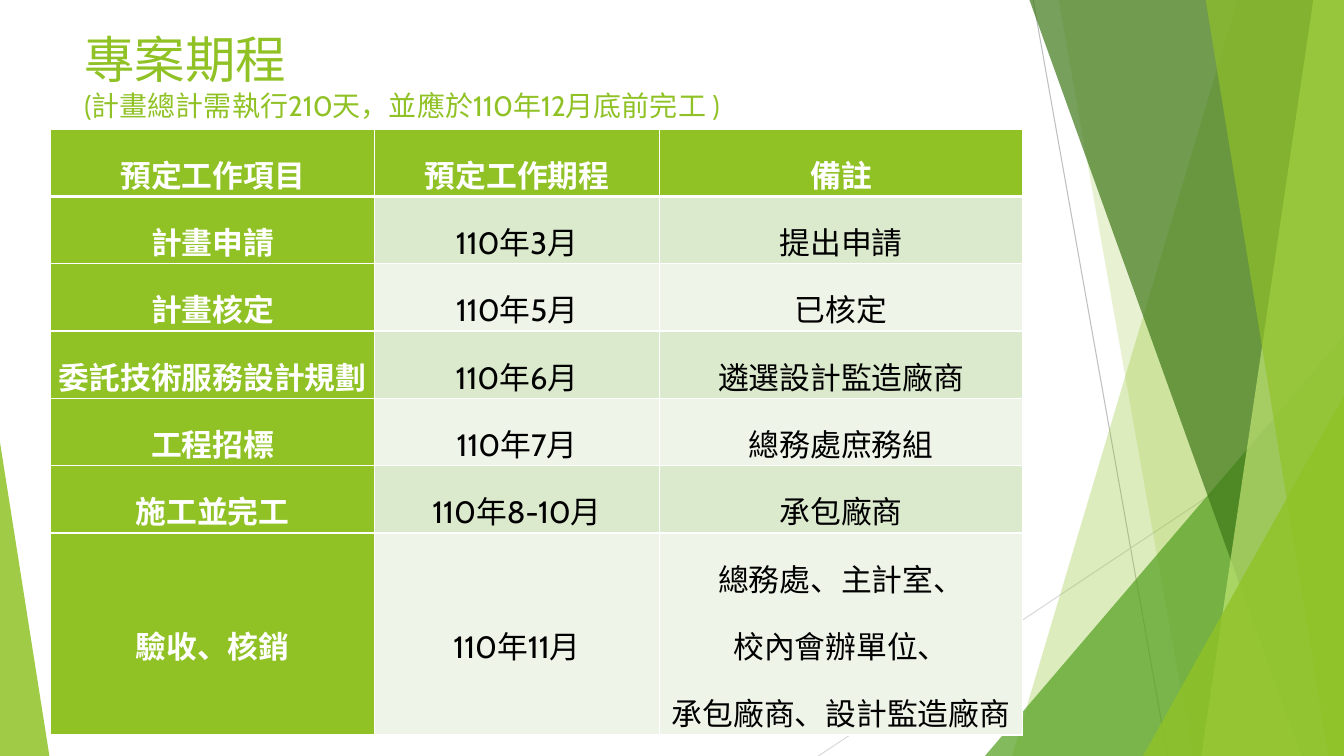
from dataclasses import dataclass

from lxml import etree
from pptx import Presentation
from pptx import util as u
from pptx.dml.color import RGBColor
from pptx.enum import shapes, text
from pptx.oxml import ns


@dataclass(frozen=True)
class Theme:
    font: str = "Cabin"
    title_size: float = 36
    subtitle_size: float = 20
    table_size: float = 22
    lime: str = "90C226"
    green: str = "54A021"
    forest: str = "3F7819"
    pale: str = "C0E474"
    white: str = "FFFFFF"
    black: str = "000000"
    gray: str = "BFBFBF"
    light_gray: str = "D9D9D9"
    bands: tuple = ("DBE9CD", "EEF4E8")


def assign(target, formats):
    for name, value in formats.items():
        setattr(target, name, value)


def child(parent, tag, **attributes):
    return etree.SubElement(parent, ns.qn(tag), attributes)


class SlideBuilder:
    def __init__(self, slide, theme):
        self.slide = slide
        self.theme = theme

    def style_run(self, run, size, color, bold=False):
        assign(run.font, {"name": self.theme.font, "size": u.Pt(size), "bold": bold})
        run.font.color.rgb = RGBColor.from_string(color)

    def line(self, start, end, color):
        ray = self.slide.shapes.add_connector(
            shapes.MSO_CONNECTOR.STRAIGHT, *map(u.Pt, start + end))
        ray.line.color.rgb = RGBColor.from_string(color)
        ray.line.width = u.Pt(0.75)
        child(ray._element.spPr, "a:effectLst")

    def tint(self, facet, color, opacity):
        facet.shadow.inherit = False
        facet.line.fill.background()
        facet.fill.solid()
        facet.fill.fore_color.rgb = RGBColor.from_string(color)
        rgb = facet._element.spPr.find(ns.qn("a:solidFill"))[0]
        child(rgb, "a:alpha", val=str(opacity * 1000))

    def polygon(self, points, color, opacity):
        corners = [tuple(map(u.Pt, point)) for point in points]
        outline = self.slide.shapes.build_freeform(*corners[0], scale=1.0)
        outline.add_line_segments(corners[1:], close=True)
        self.tint(outline.convert_to_shape(), color, opacity)

    def triangle(self, box, apex, color, opacity):
        facet = self.slide.shapes.add_shape(
            shapes.MSO_SHAPE.ISOSCELES_TRIANGLE, *map(u.Pt, box))
        facet.adjustments[0] = apex
        self.tint(facet, color, opacity)

    def heading(self, box, title, subtitle):
        frame = self.slide.shapes.add_textbox(*map(u.Pt, box)).text_frame
        assign(frame, {"word_wrap": True, "vertical_anchor": text.MSO_ANCHOR.MIDDLE})
        paragraph = frame.paragraphs[0]
        for index, (words, size) in enumerate(
                ((title, self.theme.title_size), (subtitle, self.theme.subtitle_size))):
            if index:
                paragraph.add_line_break()
            run = paragraph.add_run()
            run.text = words
            self.style_run(run, size, self.theme.lime)

    def borders(self, cell, bottom):
        properties = cell._tc.get_or_add_tcPr()
        for side, width in (("L", 1), ("R", 1), ("T", 1), ("B", bottom)):
            edge = child(properties, f"a:ln{side}", w=str(u.Pt(width)))
            child(child(edge, "a:solidFill"), "a:srgbClr", val=self.theme.white)

    def cell(self, cell, words, fill, color, bold, bottom):
        assign(cell, {
            "margin_left": u.Pt(4.5), "margin_right": u.Pt(4.5),
            "margin_top": 0, "margin_bottom": 0,
            "vertical_anchor": text.MSO_ANCHOR.MIDDLE})
        self.borders(cell, bottom)
        cell.fill.solid()
        cell.fill.fore_color.rgb = RGBColor.from_string(fill)
        cell.text = words
        for paragraph in cell.text_frame.paragraphs:
            assign(paragraph, {"alignment": text.PP_ALIGN.CENTER, "line_spacing": 1.5})
            for run in paragraph.runs:
                self.style_run(run, self.theme.table_size, color, bold)

    def table(self, origin, widths, heights, rows):
        size = (sum(widths), sum(heights))
        grid = self.slide.shapes.add_table(
            len(rows), len(widths), *map(u.Pt, origin + size)).table
        for column, width in zip(grid.columns, widths):
            column.width = u.Pt(width)
        for r, (row, height) in enumerate(zip(rows, heights)):
            grid.rows[r].height = u.Pt(height)
            for c, words in enumerate(row):
                head = r == 0 or c == 0
                fill = self.theme.lime if head else self.theme.bands[(r - 1) % 2]
                color = self.theme.white if head else self.theme.black
                self.cell(grid.cell(r, c), words, fill, color, head, 1 if r else 3)


SCHEDULE = [
    ("預定工作項目", "預定工作期程", "備註"),
    ("計畫申請", "110年3月", "提出申請"),
    ("計畫核定", "110年5月", "已核定"),
    ("委託技術服務設計規劃", "110年6月", "遴選設計監造廠商"),
    ("工程招標", "110年7月", "總務處庶務組"),
    ("施工並完工", "110年8-10月", "承包廠商"),
    ("驗收、核銷", "110年11月", "總務處、主計室、\n校內會辦單位、\n承包廠商、設計監造廠商"),
]


def main():
    width, height, top = 960, 540, -0.7
    deck = Presentation()
    assign(deck, {"slide_width": u.Pt(width), "slide_height": u.Pt(height)})
    theme = Theme()
    builder = SlideBuilder(deck.slides.add_slide(deck.slide_layouts[6]), theme)

    def facet(top_left, bottom_left, color, opacity):
        builder.polygon([(top_left, top), (width, top), (width, height),
                         (bottom_left, height)], color, opacity)

    def corner(left, peak, color, opacity):
        builder.triangle((left, peak, width - left, height - peak), 1, color, opacity)

    builder.line((738, 0), (834, height), theme.gray)
    builder.line((width, 290), (584.6, height), theme.light_gray)
    facet(884.2, 722.9, theme.lime, 30)
    facet(756, 851.8, theme.lime, 20)
    corner(703.5, 240, theme.green, 72)
    facet(735.1, 929.5, theme.forest, 70)
    facet(938.2, 858.2, theme.pale, 70)
    facet(861.1, 949, theme.lime, 65)
    corner(816.5, 283, theme.lime, 80)
    builder.triangle((0, 316, 35.3, 224), 0, theme.lime, 85)

    builder.heading((53.3, 15.1, 676.8, 77), "專案期程",
                    "(計畫總計需執行210天，並應於110年12月底前完工 )")
    row_height = 48.1
    builder.table((36.3, 92.2), (231.1, 203.8, 259.2),
                  [row_height] * 6 + [row_height * 3], SCHEDULE)
    deck.save("out.pptx")


if __name__ == "__main__":
    main()
